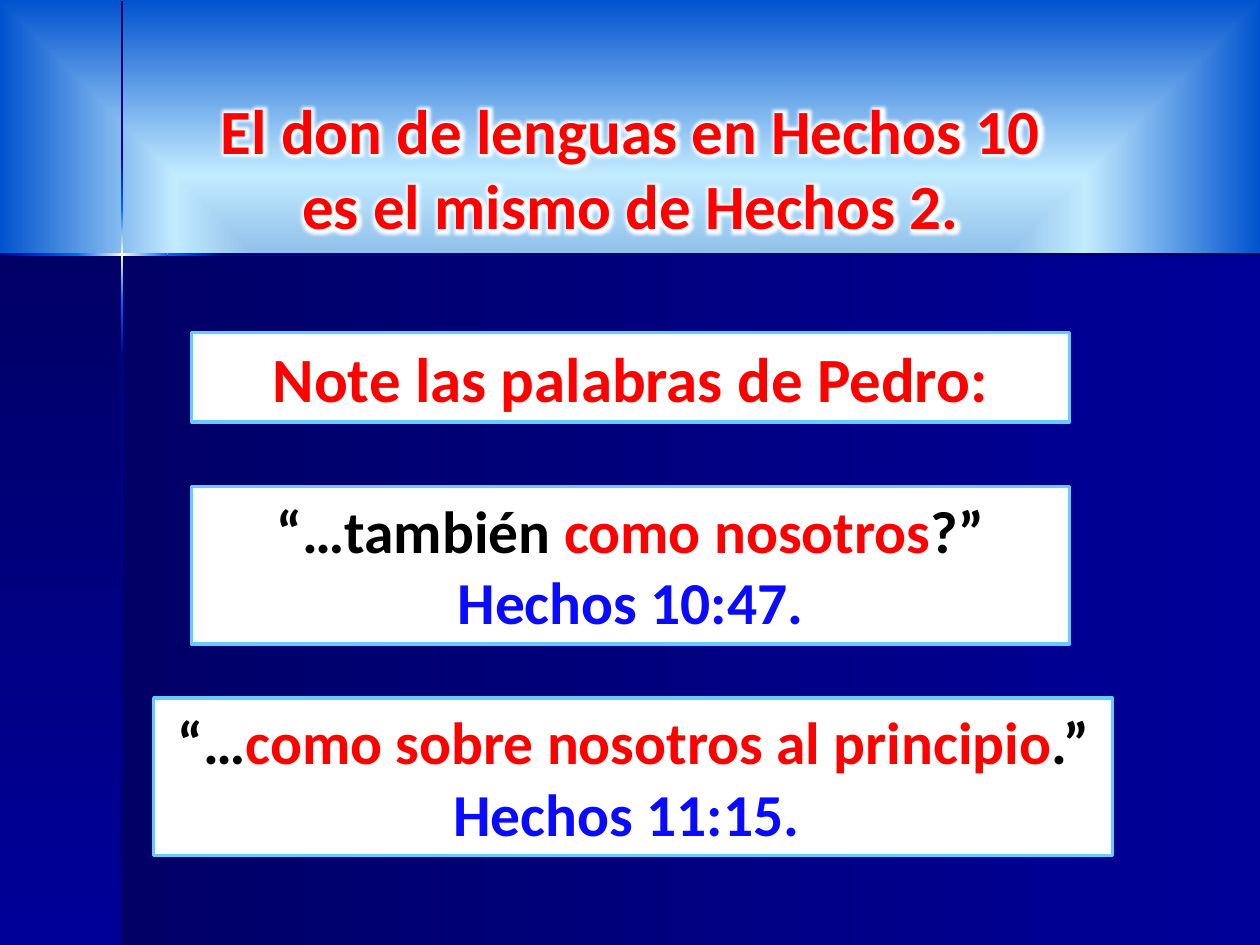
from dataclasses import dataclass

from lxml import etree
from pptx import Presentation
from pptx.dml.color import RGBColor
from pptx.enum.shapes import MSO_SHAPE
from pptx.enum.text import MSO_ANCHOR, MSO_AUTO_SIZE, PP_ALIGN
from pptx.oxml import parse_xml
from pptx.oxml.ns import nsdecls, qn
from pptx.util import Inches, Pt

RECTANGLE = MSO_SHAPE.RECTANGLE
CENTER = PP_ALIGN.CENTER
MIDDLE = MSO_ANCHOR.MIDDLE
NO_AUTOFIT = MSO_AUTO_SIZE.NONE
TITLE_ONLY = 5
ACROSS, DOWN = 0, 90


@dataclass(frozen=True)
class Theme:
    font: str = "Calibri"
    heading: int = 36
    quote: int = 34
    red: str = "FF0000"
    black: str = "000000"
    blue: str = "0A0AFF"
    white: str = "FFFFFF"
    border: str = "66CCFF"
    navy: str = "000066"
    deep: str = "000099"
    bright: str = "0066FF"
    cream: str = "FFFFCC"
    sky: tuple = ((0, "0045AD"), (63, "C2EBFF"), (100, "0052CE"), (100, "0040A2"))


THEME = Theme()


def gradient(stops, angle=None):
    """Linear gradient at an angle, or one spreading from the centre."""
    marks = "".join(
        f'<a:gs pos="{place * 1000}"><a:srgbClr val="{color}"/></a:gs>'
        for place, color in stops
    )
    if angle is None:
        shade = ('<a:path path="shape"><a:fillToRect l="50000" t="50000" '
                 'r="50000" b="50000"/></a:path>')
    else:
        shade = f'<a:lin ang="{angle * 60000}" scaled="1"/>'
    return parse_xml(f'<a:gradFill {nsdecls("a")} rotWithShape="1">'
                     f"<a:gsLst>{marks}</a:gsLst>{shade}</a:gradFill>")


def add_rectangle(page, box):
    shape = page.shapes.add_shape(RECTANGLE, *map(Inches, box))
    shape.shadow.inherit = False
    return shape


def add_gradient_bar(page, box, colors, angle):
    bar = add_rectangle(page, box)
    bar.line.fill.background()
    step = 100 // (len(colors) - 1)
    stops = [(index * step, color) for index, color in enumerate(colors)]
    bar._element.spPr.find(qn("a:prstGeom")).addnext(gradient(stops, angle))


def add_backdrop(page, box, corner):
    """Sky, two dark panels and the glowing cross where they meet the sky."""
    left, top, right, bottom = box
    x, y = corner
    fill = page.background.fill
    fill.solid()
    holder = page._element.cSld.bg.bgPr
    holder.replace(holder.find(qn("a:solidFill")), gradient(THEME.sky))

    # Panels
    dark = (THEME.navy, THEME.deep)
    add_gradient_bar(page, (x, y, right - x, bottom - y), dark, ACROSS)
    add_gradient_bar(page, (left, y, x - left, bottom - y), dark, DOWN)

    # Cross: colours brighten towards the corner and fade after it
    rising = (THEME.deep, THEME.bright)
    bands = [dark, rising, (THEME.bright, THEME.cream, THEME.bright),
             rising[::-1], dark[::-1]]
    rows = (top + 0.01, 1.21, 1.65, 2.38, 2.82, bottom)
    columns = (left, 0.61, 1.33, 1.77, right)
    for start, end, colors in zip(rows, rows[1:], bands):
        add_gradient_bar(page, (x - 0.01, start, 0.02, end - start), colors, DOWN)
    for start, end, colors in zip(columns, columns[1:], bands[1:]):
        add_gradient_bar(page, (start, y - 0.01, end - start, 0.02), colors, ACROSS)


def add_span(para, text, color, size):
    span = para.add_run()
    span.text = text
    look = {"name": THEME.font, "size": Pt(size), "bold": True}
    for name, value in look.items():
        setattr(span.font, name, value)
    span.font.color.rgb = RGBColor.from_string(color)
    outline = parse_xml(f'<a:ln {nsdecls("a")} w="9525"><a:solidFill>'
                        f'<a:srgbClr val="{color}"/></a:solidFill></a:ln>')
    span.font._element.insert(0, outline)
    return span


def format_frame(frame):
    look = {"word_wrap": True, "auto_size": NO_AUTOFIT, "vertical_anchor": MIDDLE}
    for name, value in look.items():
        setattr(frame, name, value)


def add_title(page, box, text):
    title = page.shapes.title
    for name, value in zip(("left", "top", "width", "height"), box):
        setattr(title, name, Inches(value))
    format_frame(title.text_frame)
    para = title.text_frame.paragraphs[0]
    para.alignment = CENTER
    span = add_span(para, text, THEME.red, THEME.heading)

    # White glow around the letters
    effects = etree.Element(qn("a:effectLst"))
    glow = etree.SubElement(effects, qn("a:glow"), rad="101600")
    etree.SubElement(glow, qn("a:srgbClr"), val=THEME.white)
    span.font._element.find(qn("a:solidFill")).addnext(effects)


def add_card(page, box, lines, size):
    """White framed card; each line is a list of (text, colour) spans."""
    card = add_rectangle(page, box)
    card.fill.solid()
    card.fill.fore_color.rgb = RGBColor.from_string(THEME.white)
    card.line.color.rgb = RGBColor.from_string(THEME.border)
    card.line.width = Pt(2)
    frame = card.text_frame
    format_frame(frame)
    for index, line in enumerate(lines):
        para = frame.add_paragraph() if index else frame.paragraphs[0]
        para.alignment = CENTER
        for text, color in line:
            add_span(para, text, color, size)


def main():
    deck = Presentation()
    deck.slide_width, deck.slide_height = Inches(10), Inches(7.5)
    page = deck.slides.add_slide(deck.slide_layouts[TITLE_ONLY])
    red, black, blue = THEME.red, THEME.black, THEME.blue

    add_backdrop(page, (0, 0, 10, 7.5), (0.97, 2.02))
    add_title(page, (1.52, 0.67, 6.97, 1.31),
              "El don de lenguas en Hechos 10 es el mismo de Hechos 2.")
    add_card(page, (1.52, 2.64, 6.97, 0.71),
             [[("Note las palabras de Pedro:", red)]], THEME.heading)
    add_card(page, (1.52, 3.86, 6.97, 1.25),
             [[("“…también ", black), ("como nosotros", red), ("?”", black)],
              [(" Hechos 10:47. ", blue)]], THEME.quote)
    add_card(page, (1.22, 5.54, 7.61, 1.25),
             [[("“…", black), ("como sobre nosotros al principio", red),
               (".” ", black), ("Hechos 11:15. ", blue)]], THEME.quote)
    deck.save("out.pptx")


if __name__ == "__main__":
    main()
